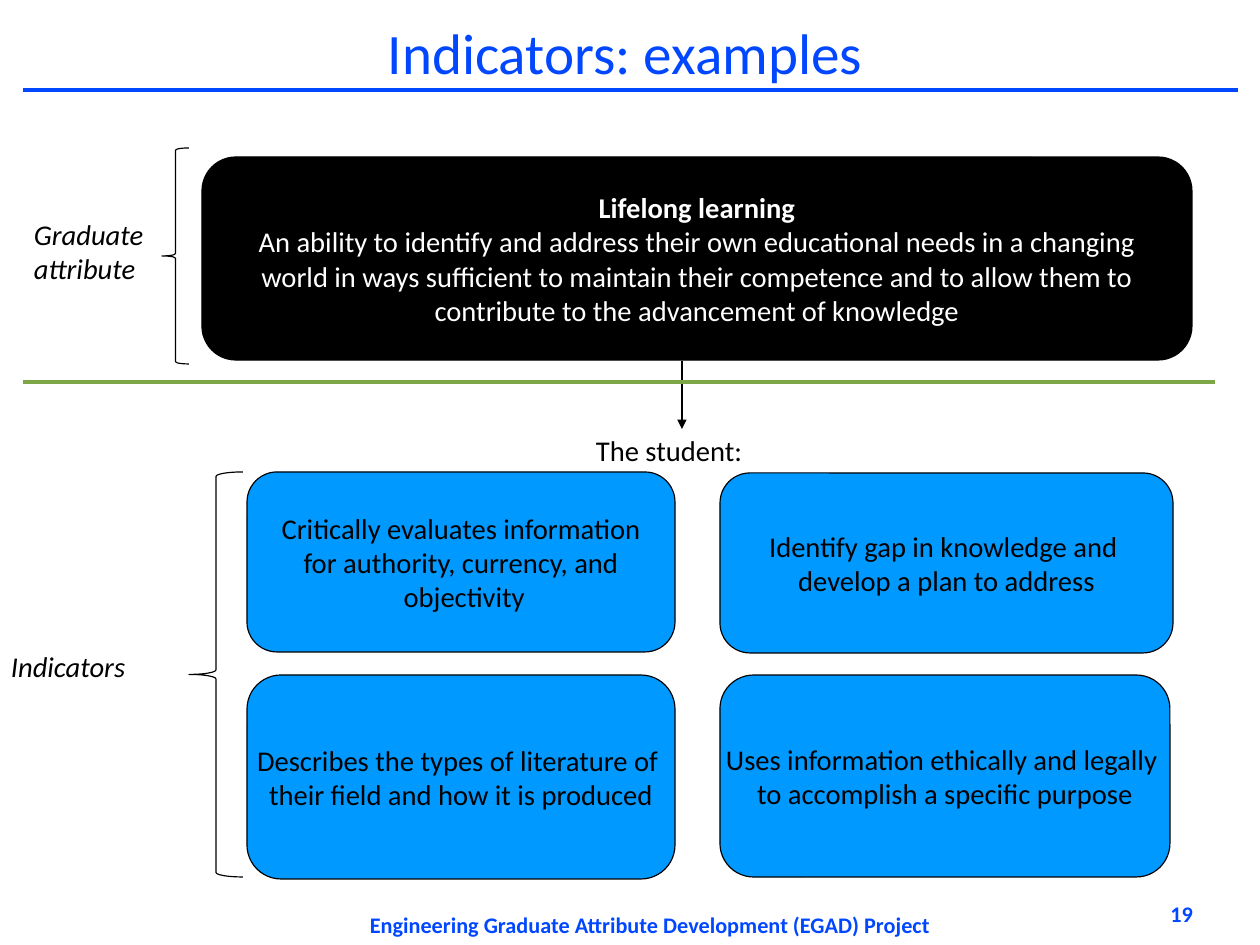
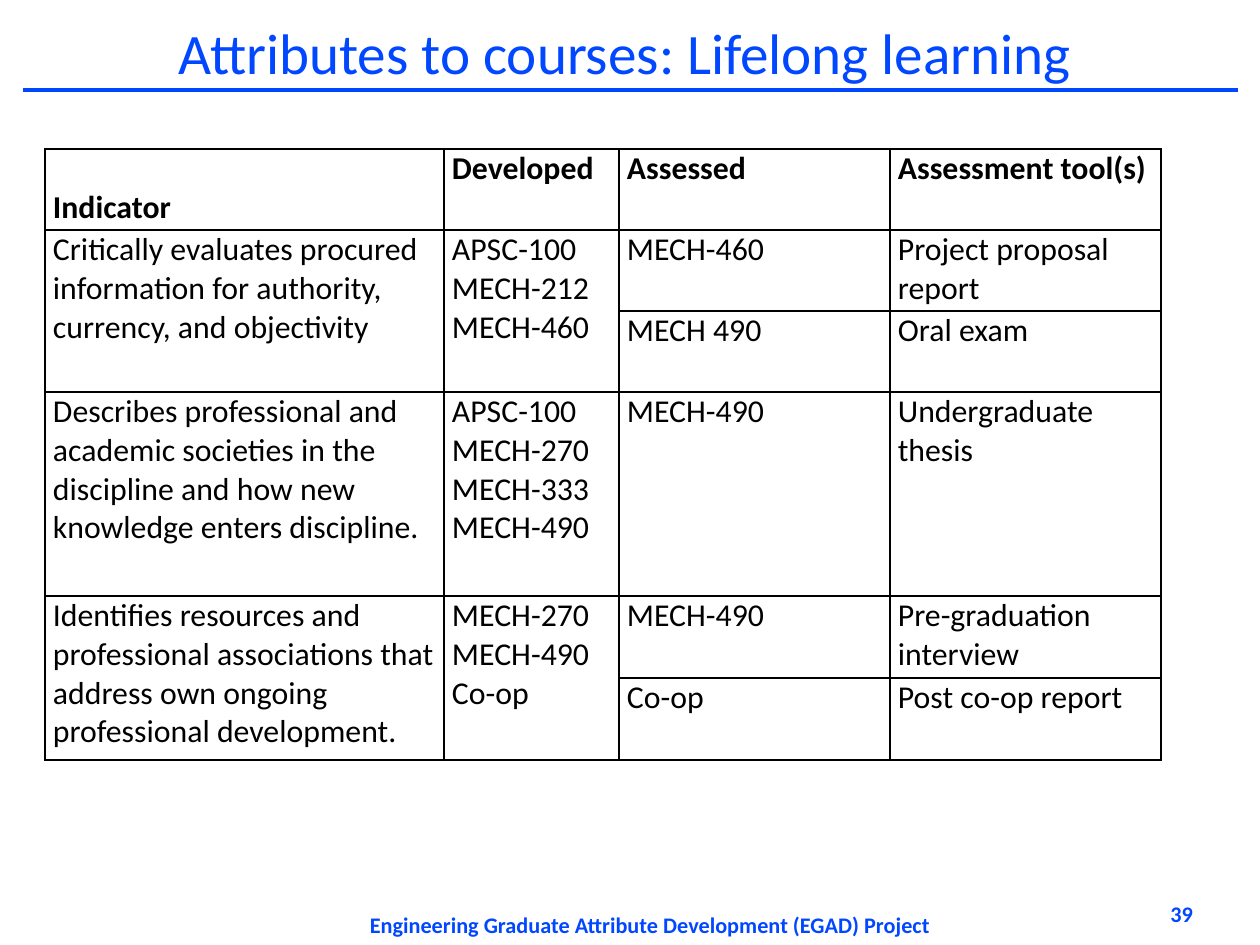
from dataclasses import dataclass

from lxml.etree import SubElement
from pptx import Presentation
from pptx.dml.color import RGBColor
from pptx.enum.shapes import MSO_CONNECTOR as Connector, MSO_SHAPE as Preset
from pptx.enum.text import MSO_ANCHOR as Anchor, PP_ALIGN as Align
from pptx.oxml.ns import qn
from pptx.util import Pt

SCALE = 8000
FONT = "Calibri"
COLORS = {
    "accent": "0047FF",
    "panel": "0099FF",
    "divider": "7DA647",
    "ink": "000000",
    "paper": "FFFFFF",
}
FOOTER = "Engineering Graduate Attribute Development (EGAD) Project"


@dataclass(frozen=True)
class Area:
    left: int
    top: int
    width: int
    height: int

    def emu(self) -> tuple:
        return tuple(px(n) for n in (self.left, self.top, self.width, self.height))


@dataclass(frozen=True)
class Style:
    size: int = 18
    color: str = "ink"
    bold: bool = False
    italic: bool = False
    align: Align = Align.LEFT


@dataclass(frozen=True)
class Line:
    text: str
    style: Style


@dataclass(frozen=True)
class Panel:
    area: Area
    fill: str
    lines: tuple


@dataclass(frozen=True)
class Entry:
    row: int
    column: int
    lines: tuple
    rows: int = 1


TITLE = Style(36, "accent", align=Align.CENTER)
FOOT = Style(14, "accent", bold=True, align=Align.CENTER)
NUMBER = Style(14, "accent", bold=True, align=Align.RIGHT)
PLAIN = Style()
LABEL = Style(italic=True)
CENTERED = Style(align=Align.CENTER)
REVERSED = Style(color="paper", align=Align.CENTER)
REVERSED_BOLD = Style(color="paper", bold=True, align=Align.CENTER)
CELL = Style(20)
CELL_HEAD = Style(20, bold=True)


def px(count: int) -> int:
    return count * SCALE


def rgb(name: str) -> RGBColor:
    return RGBColor.from_string(COLORS[name])


def styled(style: Style, *texts: str) -> tuple:
    return tuple(Line(text, style) for text in texts)


def write(frame, lines: tuple) -> None:
    for index, line in enumerate(lines):
        para = frame.add_paragraph() if index else frame.paragraphs[0]
        para.alignment = line.style.align
        span = para.add_run()
        span.text = line.text
        span.font.name = FONT
        span.font.size = Pt(line.style.size)
        span.font.bold = line.style.bold
        span.font.italic = line.style.italic
        span.font.color.rgb = rgb(line.style.color)


def set_insets(frame, side: int, end: int) -> None:
    frame.margin_left = frame.margin_right = px(side)
    frame.margin_top = frame.margin_bottom = px(end)


def add_text(page, area: Area, lines: tuple, inset: bool = False,
             anchor: Anchor = Anchor.TOP) -> None:
    frame = page.shapes.add_textbox(*area.emu()).text_frame
    frame.word_wrap = True
    frame.vertical_anchor = anchor
    set_insets(frame, *((11, 6) if inset else (0, 0)))
    write(frame, lines)


def add_line(page, start: tuple, end: tuple, color: str, weight: float,
             arrow: bool = False) -> None:
    line = page.shapes.add_connector(
        Connector.STRAIGHT, *(px(n) for n in start + end))
    line.line.color.rgb = rgb(color)
    line.line.width = Pt(weight)
    properties = line._element.spPr
    if arrow:
        SubElement(properties.find(qn("a:ln")), qn("a:tailEnd"), type="triangle")
    SubElement(properties, qn("a:effectLst"))


def add_outlined(page, preset: Preset, area: Area):
    shape = page.shapes.add_shape(preset, *area.emu())
    shape.shadow.inherit = False
    shape.line.color.rgb = rgb("ink")
    shape.line.width = Pt(0.75)
    return shape


def add_panel(page, panel: Panel) -> None:
    box = add_outlined(page, Preset.ROUNDED_RECTANGLE, panel.area)
    box.fill.solid()
    box.fill.fore_color.rgb = rgb(panel.fill)
    frame = box.text_frame
    frame.word_wrap = False
    frame.vertical_anchor = Anchor.MIDDLE
    set_insets(frame, 11, 6)
    write(frame, panel.lines)


def add_brace(page, area: Area) -> None:
    add_outlined(page, Preset.LEFT_BRACE, area).fill.background()


def add_page(deck, title: str, number: int):
    page = deck.slides.add_slide(deck.slide_layouts[6])
    add_line(page, (23, 90), (1238, 90), "accent", 2.83)
    add_text(page, Area(58, 15, 1134, 74), styled(TITLE, title), anchor=Anchor.MIDDLE)
    add_text(page, Area(351, 911, 598, 34), styled(FOOT, FOOTER))
    add_text(page, Area(954, 900, 239, 45), styled(NUMBER, str(number)))
    return page


def format_cell(cell) -> None:
    cell.fill.solid()
    cell.fill.fore_color.rgb = rgb("paper")
    set_insets(cell, 8, 0)
    properties = cell._tc.get_or_add_tcPr()
    for index, side in enumerate(("lnL", "lnR", "lnT", "lnB")):
        border = SubElement(properties, qn(f"a:{side}"), w=str(Pt(1)))
        fill = SubElement(border, qn("a:solidFill"))
        SubElement(fill, qn("a:srgbClr"), val=COLORS["ink"])
        properties.insert(index, border)


def add_grid(page, area: Area, widths: tuple, heights: tuple, entries: tuple) -> None:
    table = page.shapes.add_table(len(heights), len(widths), *area.emu()).table
    table.first_row = False
    table.horz_banding = False
    for column, width in zip(table.columns, widths):
        column.width = px(width)
    for row, height in zip(table.rows, heights):
        row.height = px(height)
    for cell in table.iter_cells():
        format_cell(cell)
    for entry in entries:
        cell = table.cell(entry.row, entry.column)
        if entry.rows > 1:
            cell.merge(table.cell(entry.row + entry.rows - 1, entry.column))
        write(cell.text_frame, entry.lines)
    corner = table.cell(0, 0)
    corner.vertical_anchor = Anchor.BOTTOM
    corner.margin_bottom = px(3)


def build_examples(deck) -> None:
    page = add_page(deck, "Indicators: examples", 19)
    attribute = styled(REVERSED_BOLD, "Lifelong learning") + styled(
        REVERSED,
        "An ability to identify and address their own educational needs in a changing",
        "world in ways sufficient to maintain their competence and to allow them to",
        "contribute to the advancement of knowledge")
    indicators = (
        (Area(247, 472, 428, 180), ("Critically evaluates information",
                                    "for authority, currency, and", " objectivity")),
        (Area(720, 473, 453, 180), ("Identify gap in knowledge and ",
                                    "develop a plan to address")),
        (Area(247, 675, 428, 204), ("Describes the types of literature of ",
                                    "their field and how it is produced")),
        (Area(720, 675, 450, 202), ("Uses information ethically and legally ",
                                    "to accomplish a specific purpose")),
    )
    add_panel(page, Panel(Area(202, 157, 990, 203), "ink", attribute))
    for area, texts in indicators:
        add_panel(page, Panel(area, "panel", styled(CENTERED, *texts)))
    add_line(page, (682, 361), (682, 429), "ink", 0.75, arrow=True)
    add_line(page, (23, 382), (1215, 382), "divider", 2.83)
    for area, lines in (
        (Area(23, 211, 137, 81), styled(LABEL, "Graduate", "attribute")),
        (Area(585, 427, 180, 45), styled(PLAIN, "The student:")),
        (Area(0, 643, 180, 81), styled(LABEL, "Indicators")),
    ):
        add_text(page, area, lines, inset=True)
    for area in (Area(162, 148, 27, 216), Area(189, 472, 54, 405)):
        add_brace(page, area)


def build_courses(deck) -> None:
    page = add_page(deck, "Attributes to courses: Lifelong learning", 39)
    heads = ("Indicator", "Developed", "Assessed", "Assessment tool(s)")
    groups = (
        ("Critically evaluates procured information for authority, currency, "
         "and objectivity",
         ("APSC-100", "MECH-212", "MECH-460"),
         (("MECH-460", "Project proposal report"), ("MECH 490", "Oral exam"))),
        ("Describes professional and academic societies in the discipline and "
         "how new knowledge enters discipline.",
         ("APSC-100", "MECH-270", "MECH-333", "MECH-490"),
         (("MECH-490", "Undergraduate thesis"),)),
        ("Identifies resources and professional associations that address own "
         "ongoing professional development.",
         ("MECH-270", "MECH-490", "Co-op"),
         (("MECH-490", "Pre-graduation interview"), ("Co-op", "Post co-op report"))),
    )
    entries = [Entry(0, column, styled(CELL_HEAD, head))
               for column, head in enumerate(heads)]
    row = 1
    for indicator, courses, assessments in groups:
        count = len(assessments)
        entries.append(Entry(row, 0, styled(CELL, indicator), count))
        entries.append(Entry(row, 1, styled(CELL, *courses), count))
        for assessment in assessments:
            for column, text in enumerate(assessment, start=2):
                entries.append(Entry(row, column, styled(CELL, text)))
            row += 1
    add_grid(page, Area(45, 149, 1116, 611), (399, 175, 271, 271),
             (81, 81, 81, 204, 82, 82), tuple(entries))


def main() -> None:
    deck = Presentation()
    deck.slide_width = px(1260)
    deck.slide_height = px(945)
    deck.element.find(qn("p:sldSz")).attrib.pop("type", None)
    build_examples(deck)
    build_courses(deck)
    deck.save("out.pptx")


if __name__ == "__main__":
    main()
